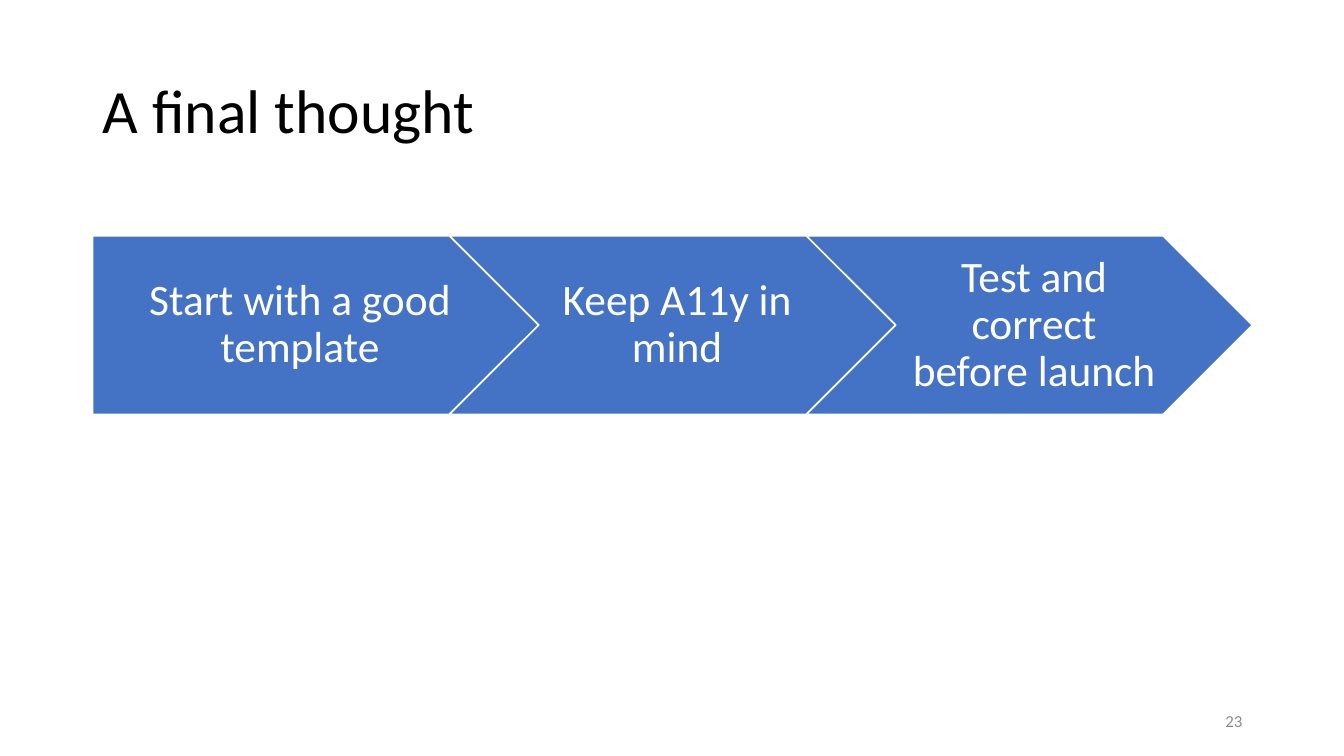
from pptx import Presentation
from pptx.dml.color import RGBColor
from pptx.enum.shapes import MSO_SHAPE
from pptx.enum.text import MSO_ANCHOR, PP_ALIGN
from pptx.util import Inches, Pt

COLORS = {"title": "000000", "step": "4472C4", "white": "FFFFFF", "number": "8C8C8C"}
FONT = "Calibri"
STEPS = ["Start with a good template", "Keep A11y in mind", "Test and correct before launch"]
STEP_LEFT, STEP_TOP = 0.92, 2.34
STEP_WIDTH, STEP_HEIGHT = 4.42, 1.77
STEP_PITCH = 3.54


def write_text(shape, text, size, color, alignment, line_spacing=1.0):
    frame = shape.text_frame
    frame.word_wrap = True
    frame.vertical_anchor = MSO_ANCHOR.MIDDLE
    paragraph = frame.paragraphs[0]
    paragraph.alignment = alignment
    paragraph.line_spacing = line_spacing
    run = paragraph.add_run()
    run.text = text
    run.font.name = FONT
    run.font.size = Pt(size)
    run.font.color.rgb = RGBColor.from_string(COLORS[color])


presentation = Presentation()
presentation.slide_width = Inches(13.33)
presentation.slide_height = Inches(7.5)
slide = presentation.slides.add_slide(presentation.slide_layouts[6])

title = slide.shapes.add_textbox(Inches(0.92), Inches(0.4), Inches(11.5), Inches(1.45))
write_text(title, "A final thought", 44, "title", PP_ALIGN.LEFT, 0.9)

for index, text in enumerate(STEPS):
    step = slide.shapes.add_shape(
        MSO_SHAPE.CHEVRON if index else MSO_SHAPE.PENTAGON,
        Inches(STEP_LEFT + index * STEP_PITCH), Inches(STEP_TOP),
        Inches(STEP_WIDTH), Inches(STEP_HEIGHT))
    step.shadow.inherit = False
    step.fill.solid()
    step.fill.fore_color.rgb = RGBColor.from_string(COLORS["step"])
    step.line.color.rgb = RGBColor.from_string(COLORS["white"])
    step.line.width = Pt(1)
    frame = step.text_frame
    frame.margin_left = Inches(0.14 if index else 0.18)
    frame.margin_right = Inches(0.05)
    frame.margin_top = frame.margin_bottom = Inches(0.09)
    write_text(step, text, 31, "white", PP_ALIGN.CENTER, 0.9)

slide_number = slide.shapes.add_textbox(Inches(9.42), Inches(6.95), Inches(3), Inches(0.4))
write_text(slide_number, "23", 12, "number", PP_ALIGN.RIGHT)

presentation.save("out.pptx")
